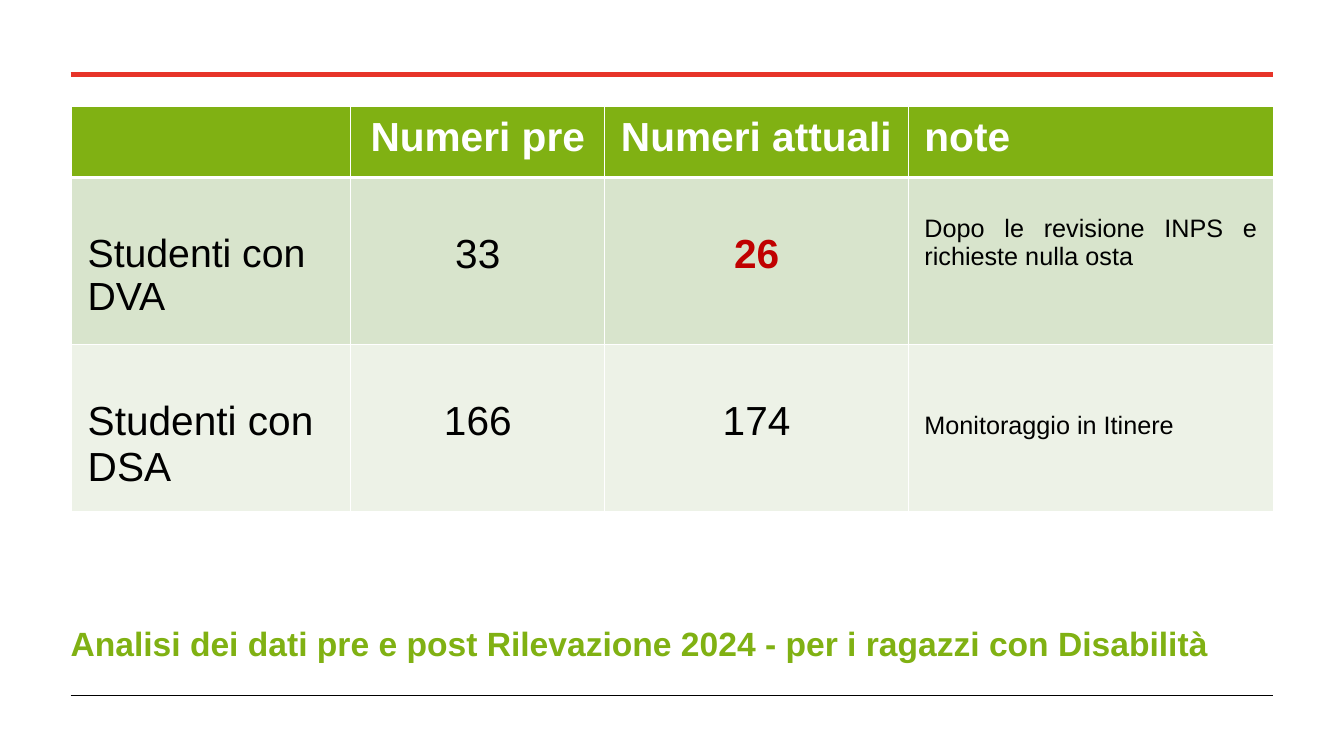
from dataclasses import dataclass

from lxml.etree import SubElement
from pptx import Presentation
from pptx.dml.color import RGBColor
from pptx.enum.shapes import MSO_CONNECTOR
from pptx.enum.text import MSO_ANCHOR, MSO_AUTO_SIZE, PP_ALIGN
from pptx.oxml.ns import qn
from pptx.util import Inches, Pt


@dataclass(frozen=True)
class Theme:
    font: str = "Arial"
    green: str = "80B113"
    red: str = "E73429"
    alert: str = "C00000"
    black: str = "000000"
    white: str = "FFFFFF"
    bands: tuple = ("D8E4CC", "EDF2E7")
    title_size: int = 24
    table_size: int = 29
    label_size: int = 28
    note_size: int = 18


@dataclass(frozen=True)
class CellText:
    text: str
    size: int = Theme.table_size
    color: str = Theme.black
    bold: bool = False
    align: PP_ALIGN = PP_ALIGN.LEFT
    top: float = 0.54


THEME = Theme()
COLUMN_WIDTHS = (2.77, 2.52, 3.01, 3.62)
ROW_HEIGHTS = (0.7, 1.66, 1.66)


def header(text, align=PP_ALIGN.LEFT):
    return CellText(text, color=THEME.white, bold=True, align=align, top=0.08)


def number(text, color=THEME.black, bold=False):
    return CellText(text, color=color, bold=bold, align=PP_ALIGN.CENTER)


def note(text, top):
    return CellText(text, size=THEME.note_size, align=PP_ALIGN.JUSTIFY, top=top)


ROWS = (
    (header(""), header("Numeri pre", PP_ALIGN.CENTER), header("Numeri attuali"), header("note")),
    (CellText("Studenti con DVA", size=THEME.label_size), number("33"),
     number("26", THEME.alert, True),
     note("Dopo le revisione INPS e richieste nulla osta", 0.37)),
    (CellText("Studenti con DSA"), number("166"), number("174"),
     note("Monitoraggio in Itinere", 0.66)),
)


def style_font(font, size, color, bold):
    font.name = THEME.font
    font.size = Pt(size)
    font.bold = bold
    font.color.rgb = RGBColor.from_string(color)


def add_title(slide, left, top, width, height):
    title = slide.shapes.title
    title.left, title.top = Inches(left), Inches(top)
    title.width, title.height = Inches(width), Inches(height)
    frame = title.text_frame
    frame.text = "Analisi dei dati pre e post Rilevazione 2024 - per i ragazzi con Disabilità"
    frame.word_wrap = True
    frame.auto_size = MSO_AUTO_SIZE.NONE
    frame.vertical_anchor = MSO_ANCHOR.BOTTOM
    paragraph = frame.paragraphs[0]
    paragraph.alignment = PP_ALIGN.LEFT
    paragraph.line_spacing = 0.85
    paragraph.space_before = Pt(0)
    paragraph.space_after = Pt(6)
    style_font(paragraph.runs[0].font, THEME.title_size, THEME.green, True)


def add_rule(slide, left, top, width, color, weight):
    rule = slide.shapes.add_connector(
        MSO_CONNECTOR.STRAIGHT, Inches(left), Inches(top), Inches(left + width), Inches(top))
    rule.line.color.rgb = RGBColor.from_string(color)
    rule.line.width = Pt(weight)
    SubElement(rule._element.spPr, qn("a:effectLst"))


def set_borders(cell, top_weight, bottom_weight):
    properties = cell._tc.get_or_add_tcPr()
    weights = {"lnL": 1, "lnR": 1, "lnT": top_weight, "lnB": bottom_weight}
    for side, weight in weights.items():
        border = SubElement(properties, qn(f"a:{side}"), w=str(Pt(weight)))
        fill = SubElement(border, qn("a:solidFill"))
        SubElement(fill, qn("a:srgbClr"), val=THEME.white)


def fill_cell(cell, content, background):
    cell.fill.solid()
    cell.fill.fore_color.rgb = RGBColor.from_string(background)
    cell.margin_left = cell.margin_right = Inches(0.16)
    cell.margin_top, cell.margin_bottom = Inches(content.top), Inches(0.08)
    cell.vertical_anchor = MSO_ANCHOR.TOP
    cell.text_frame.text = content.text
    paragraph = cell.text_frame.paragraphs[0]
    paragraph.alignment = content.align
    for run in paragraph.runs:
        style_font(run.font, content.size, content.color, content.bold)


def add_student_table(slide, left, top):
    frame = slide.shapes.add_table(
        len(ROWS), len(COLUMN_WIDTHS), Inches(left), Inches(top),
        Inches(sum(COLUMN_WIDTHS)), Inches(sum(ROW_HEIGHTS)))
    table = frame.table
    for column, width in zip(table.columns, COLUMN_WIDTHS):
        column.width = Inches(width)
    for row, height in zip(table.rows, ROW_HEIGHTS):
        row.height = Inches(height)
    backgrounds = (THEME.green, *THEME.bands)
    for row_index, (contents, background) in enumerate(zip(ROWS, backgrounds)):
        top_weight = 3 if row_index == 1 else 1
        bottom_weight = 3 if row_index == 0 else 1
        for column_index, content in enumerate(contents):
            cell = table.cell(row_index, column_index)
            set_borders(cell, top_weight, bottom_weight)
            fill_cell(cell, content, background)


def main():
    presentation = Presentation()
    presentation.slide_width, presentation.slide_height = Inches(13.33), Inches(7.5)
    slide = presentation.slides.add_slide(presentation.slide_layouts[5])
    add_title(slide, 0.6, 5.42, 11.82, 1.21)
    add_rule(slide, 0.7, 0.74, 11.93, THEME.red, 3)
    add_rule(slide, 0.7, 6.9, 11.93, THEME.black, 0.5)
    add_student_table(slide, 0.71, 1.06)
    presentation.save("out.pptx")


if __name__ == "__main__":
    main()
